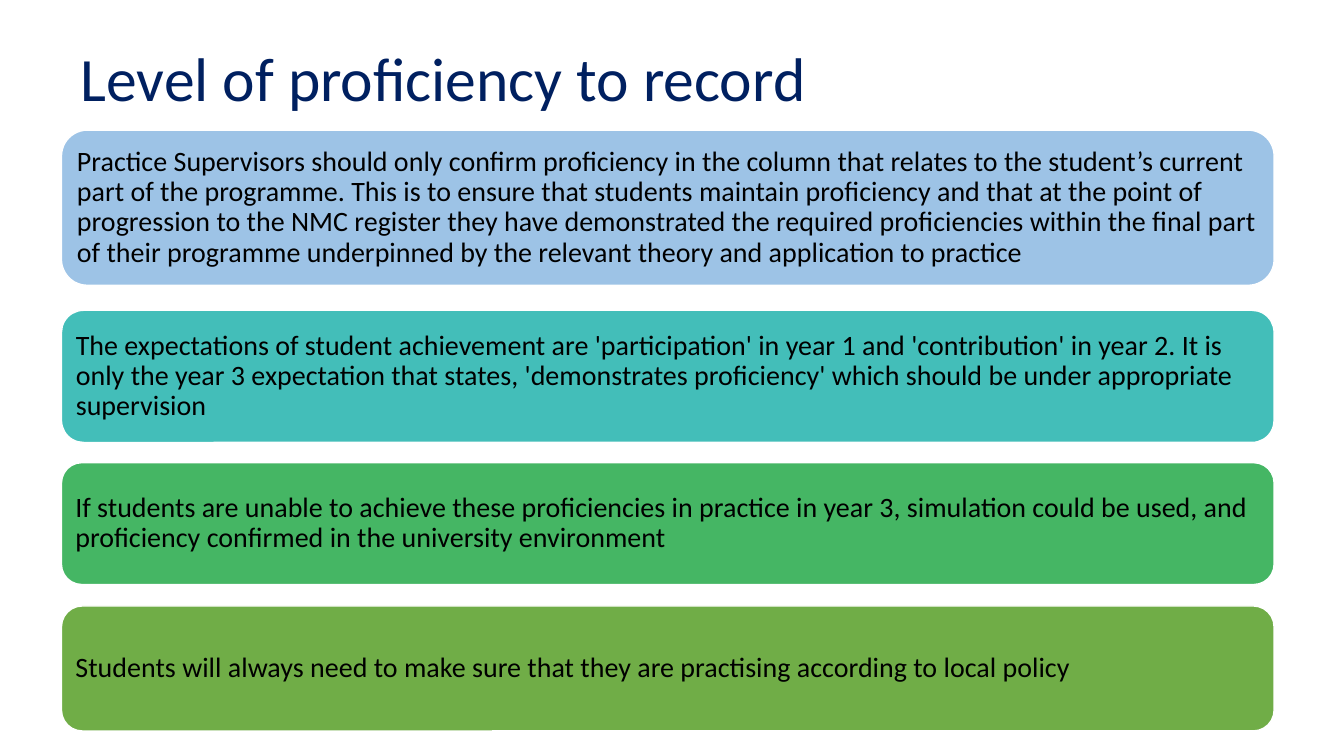
from pptx import Presentation
from pptx.dml.color import RGBColor as Rgb
from pptx.enum.shapes import MSO_SHAPE as Shape
from pptx.enum.text import MSO_ANCHOR as Anchor, PP_ALIGN as Align
from pptx.util import Cm, Pt

COLOURS = {
    "navy": "002060",
    "black": "000000",
    "white": "FFFFFF",
    "blue": "9DC3E6",
    "teal": "43BEB9",
    "green": "45B664",
    "olive": "70AD47",
}

PANEL_LEFT, PANEL_WIDTH = 1.55, 30.56

# top and height in cm, fill, wording
PANELS = [
    (3.28, 3.91, "blue",
     "Practice Supervisors should only confirm proficiency in the column that "
     "relates to the student’s current part of the programme. This is to ensure "
     "that students maintain proficiency and that at the point of progression to "
     "the NMC register they have demonstrated the required proficiencies within "
     "the final part of their programme underpinned by the relevant theory and "
     "application to practice"),
    (7.82, 3.33, "teal",
     "The expectations of student achievement are 'participation' in year 1 and "
     "'contribution' in year 2. It is only the year 3 expectation that states, "
     "'demonstrates proficiency' which should be under appropriate supervision"),
    (11.66, 3.07, "green",
     "If students are unable to achieve these proficiencies in practice in year 3, "
     "simulation could be used, and proficiency confirmed in the university "
     "environment"),
    (15.27, 3.15, "olive",
     "Students will always need to make sure that they are practising according "
     "to local policy"),
]


class SlideBuilder:
    """Holds the text style and the slide being filled."""

    font_name = "Calibri"
    line_spacing = 0.9

    def __init__(self, slide):
        self.slide = slide

    def colour(self, name):
        return Rgb.from_string(COLOURS[name])

    def set_text(self, box, text, size, colour, frame_format):
        frame = box.text_frame
        frame.word_wrap = True
        for name, value in frame_format.items():
            setattr(frame, name, value)
        para = frame.paragraphs[0]
        para.alignment = Align.LEFT
        para.line_spacing = self.line_spacing
        span = para.add_run()
        span.text = text
        font_format = {"name": self.font_name, "size": Pt(size), "bold": False}
        for name, value in font_format.items():
            setattr(span.font, name, value)
        span.font.color.rgb = self.colour(colour)

    def title(self, text, left, top, width, height):
        box = self.slide.shapes.title
        place = {"left": left, "top": top, "width": width, "height": height}
        for name, value in place.items():
            setattr(box, name, Cm(value))
        self.set_text(box, text, 44, "navy", {"vertical_anchor": Anchor.TOP})

    def panel(self, text, top, height, fill):
        box = self.slide.shapes.add_shape(
            Shape.ROUNDED_RECTANGLE,
            Cm(PANEL_LEFT), Cm(top), Cm(PANEL_WIDTH), Cm(height))
        box.shadow.inherit = False
        box.fill.solid()
        box.fill.fore_color.rgb = self.colour(fill)
        box.line.color.rgb = self.colour("white")
        box.line.width = Pt(1)
        frame_format = {f"margin_{side}": Cm(0.2)
                        for side in ("left", "top", "right", "bottom")}
        frame_format["vertical_anchor"] = Anchor.MIDDLE
        self.set_text(box, text, 20, "black", frame_format)


def main():
    deck = Presentation()
    deck.slide_width, deck.slide_height = Cm(33.87), Cm(19.05)
    title_only = deck.slide_layouts[5]
    builder = SlideBuilder(deck.slides.add_slide(title_only))
    builder.title("Level of proficiency to record", 1.78, 1.09, 29.21, 3.68)
    for top, height, fill, text in PANELS:
        builder.panel(text, top, height, fill)
    deck.save("out.pptx")


if __name__ == "__main__":
    main()
